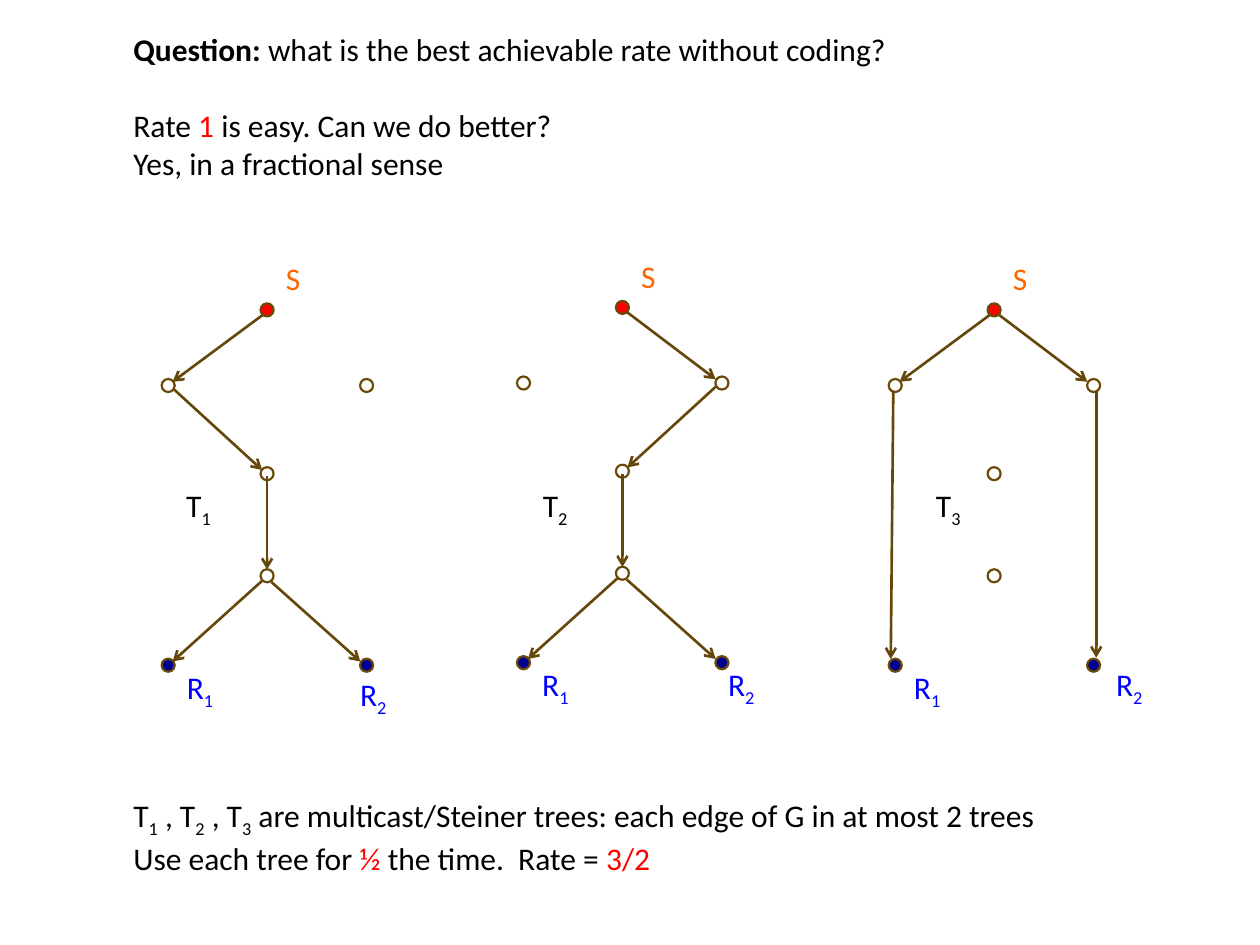
from dataclasses import dataclass

import pptx
import pptx.dml.color
import pptx.enum.shapes
import pptx.oxml.ns
import pptx.util
from lxml import etree

COLUMNS, ROWS = 100, 75


@dataclass(frozen=True)
class Theme:
    font: str = "Calibri"
    body_size: float = 18
    blank_line: float = 22
    node_line: float = 1.25
    edge_line: float = 1.5
    text: str = "000000"
    highlight: str = "FF0000"
    source: str = "FF0000"
    source_label: str = "FF6600"
    receiver: str = "000090"
    receiver_label: str = "0000FF"
    node_outline: str = "6B4908"
    edge: str = "66470B"


@dataclass(frozen=True)
class Piece:
    text: str
    color: str
    bold: bool = False
    subscript: bool = False


@dataclass(frozen=True)
class Point:
    column: float
    row: float

    def shifted(self, offset: "Point") -> "Point":
        return Point(self.column + offset.column, self.row + offset.row)


@dataclass(frozen=True)
class Tree:
    number: str
    origin: Point
    edges: tuple[str, ...]
    name_at: Point
    second_receiver_at: Point


THEME = Theme()
NODE_SIZE = 1.04

NODES = {
    "source": (Point(0, 0), THEME.source),
    "left": (Point(-7.85, 6), None),
    "right": (Point(7.9, 6), None),
    "branch": (Point(0, 21.1), None),
    "merge": (Point(0, 13), None),
    "receiver 1": (Point(-7.85, 28.2), THEME.receiver),
    "receiver 2": (Point(7.9, 28.2), THEME.receiver),
}

EDGES = {
    "source-left": (Point(-0.35, 0.4), Point(-7.5, 5.7)),
    "source-right": (Point(0.4, 0.4), Point(7.4, 5.7)),
    "left-merge": (Point(-7.4, 6.3), Point(-0.4, 12.7)),
    "right-merge": (Point(7.4, 6.3), Point(0.4, 12.7)),
    "merge-branch": (Point(0, 13.2), Point(0, 20.6)),
    "branch-receiver 1": (Point(-0.4, 21.5), Point(-7.5, 27.9)),
    "branch-receiver 2": (Point(0.35, 21.6), Point(7.4, 27.9)),
    "left-receiver 1": (Point(-8, 6.4), Point(-8.2, 27.7)),
    "right-receiver 2": (Point(8.1, 6.4), Point(8.1, 27.6)),
}

SHARED_EDGES = ("merge-branch", "branch-receiver 1", "branch-receiver 2")
TREES = (
    Tree("1", Point(21.2, 24.6), ("source-left", "left-merge") + SHARED_EDGES,
         Point(-7.4, 13.5), Point(6.4, 28.5)),
    Tree("2", Point(49.4, 24.4), ("source-right", "right-merge") + SHARED_EDGES,
         Point(-7.3, 13.7), Point(7.4, 27.9)),
    Tree("3", Point(78.9, 24.6),
         ("source-left", "source-right", "left-receiver 1", "right-receiver 2"),
         Point(-5.6, 13.5), Point(8.7, 27.7)),
)

presentation = pptx.Presentation()
presentation.slide_width = pptx.util.Inches(10)
presentation.slide_height = pptx.util.Inches(7.5)
slide = presentation.slides.add_slide(presentation.slide_layouts[6])


def across(columns: float) -> int:
    return round(presentation.slide_width * columns / COLUMNS)


def down(rows: float) -> int:
    return round(presentation.slide_height * rows / ROWS)


def rgb(color: str) -> pptx.dml.color.RGBColor:
    return pptx.dml.color.RGBColor.from_string(color)


def add_text(at: Point, width: float, height: float,
             lines: list[list[Piece]], gap_before: int | None = None) -> None:
    box = slide.shapes.add_textbox(across(at.column), down(at.row), across(width), down(height))
    frame = box.text_frame
    frame.word_wrap = True
    for index, line in enumerate(lines):
        paragraph = frame.add_paragraph() if index else frame.paragraphs[0]
        if index == gap_before:
            paragraph.space_before = pptx.util.Pt(THEME.blank_line)
        for piece in line:
            run = paragraph.add_run()
            run.text = piece.text
            run.font.name = THEME.font
            run.font.size = pptx.util.Pt(THEME.body_size)
            run.font.bold = piece.bold
            run.font.color.rgb = rgb(piece.color)
            if piece.subscript:
                run.font._element.set("baseline", "-25000")


def add_node(center: Point, fill: str | None) -> None:
    node = slide.shapes.add_shape(
        pptx.enum.shapes.MSO_SHAPE.OVAL,
        across(center.column - NODE_SIZE / 2), down(center.row - NODE_SIZE / 2),
        across(NODE_SIZE), down(NODE_SIZE))
    node.shadow.inherit = False
    if fill:
        node.fill.solid()
        node.fill.fore_color.rgb = rgb(fill)
    else:
        node.fill.background()
    node.line.color.rgb = rgb(THEME.node_outline)
    node.line.width = pptx.util.Pt(THEME.node_line)


def add_edge(start: Point, end: Point) -> None:
    edge = slide.shapes.add_connector(
        pptx.enum.shapes.MSO_CONNECTOR.STRAIGHT,
        across(start.column), down(start.row), across(end.column), down(end.row))
    edge.line.color.rgb = rgb(THEME.edge)
    edge.line.width = pptx.util.Pt(THEME.edge_line)
    qn = pptx.oxml.ns.qn
    etree.SubElement(edge.line._get_or_add_ln(), qn("a:tailEnd"), type="arrow")
    etree.SubElement(edge._element.spPr, qn("a:effectLst"))


def add_label(at: Point, letter: str, color: str, index: str = "") -> None:
    pieces = [Piece(letter, color)]
    if index:
        pieces.append(Piece(index, color, subscript=True))
    add_text(at, 5.25, 4, [pieces])


def add_tree(tree: Tree) -> None:
    for offset, fill in NODES.values():
        add_node(tree.origin.shifted(offset), fill)
    for edge in tree.edges:
        start, end = EDGES[edge]
        add_edge(tree.origin.shifted(start), tree.origin.shifted(end))
    for offset, letter, color, index in (
        (Point(0.5, -4.5), "S", THEME.source_label, ""),
        (Point(-7.35, 27.9), "R", THEME.receiver_label, "1"),
        (tree.second_receiver_at, "R", THEME.receiver_label, "2"),
        (tree.name_at, "T", THEME.text, tree.number),
    ):
        add_label(tree.origin.shifted(offset), letter, color, index)


def plain(text: str) -> Piece:
    return Piece(text, THEME.text)


def marked(text: str) -> Piece:
    return Piece(text, THEME.highlight)


question = [
    [Piece("Question: ", THEME.text, bold=True),
     plain("what is the best achievable rate without coding?")],
    [plain("Rate "), marked("1"), plain(" is easy. Can we do better?")],
    [plain("Yes, in a fractional sense")],
]
tree_names = [piece for position, tree in enumerate(TREES)
              for piece in (plain(" , T" if position else "T"),
                            Piece(tree.number, THEME.text, subscript=True))]
answer = [
    tree_names + [plain(" are multicast/Steiner trees: each edge of G in at most 2 trees")],
    [plain("Use each tree for "), marked("½"), plain(" the time.  Rate = "), marked("3/2")],
]

add_text(Point(9.6, 1.9), 67.5, 16.2, question, gap_before=1)
for tree in TREES:
    add_tree(tree)
add_text(Point(9.6, 62.7), 77.9, 7.1, answer)

presentation.save("out.pptx")
